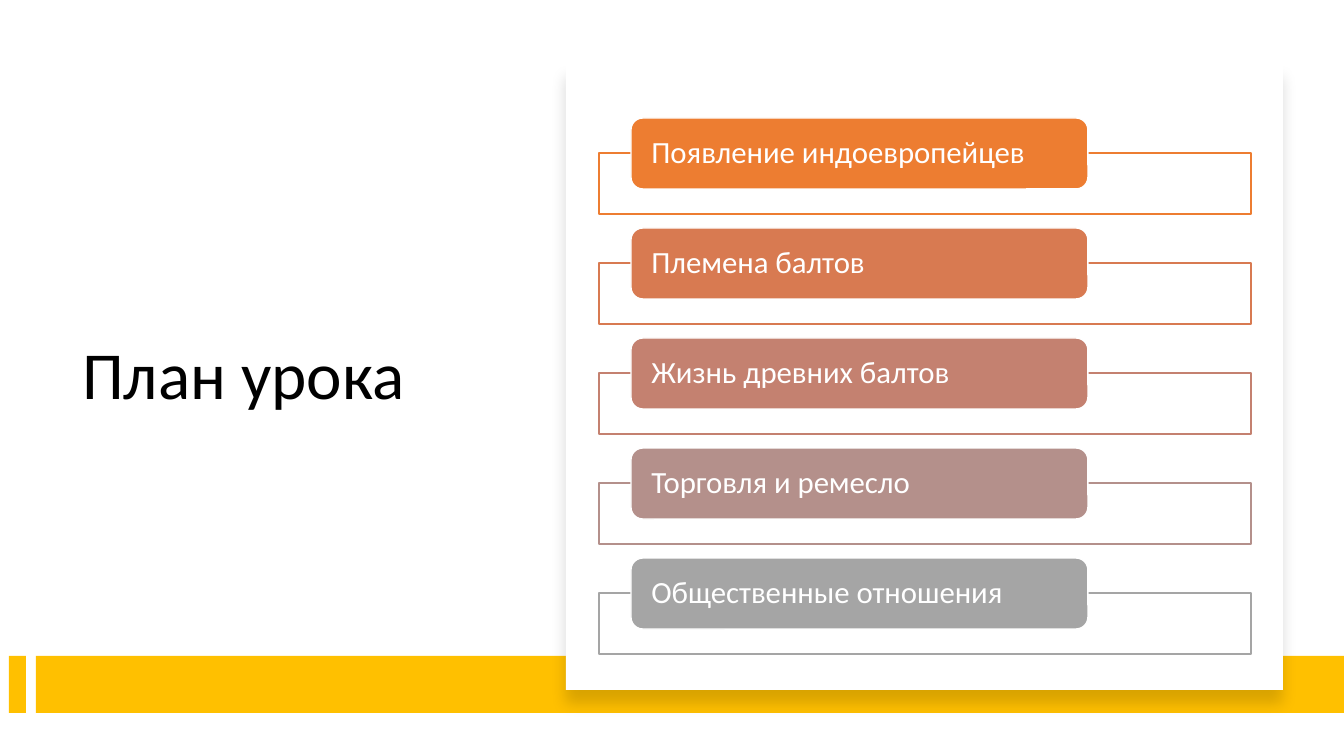
from lxml import etree
from pptx import Presentation
from pptx import util as u
from pptx.dml.color import RGBColor
from pptx.enum import shapes, text
from pptx.oxml.ns import qn

TITLE = "План урока"
TOPICS = [
    ("Появление индоевропейцев", "ED7D31"),
    ("Племена балтов", "D87A51"),
    ("Жизнь древних балтов", "C48170"),
    ("Торговля и ремесло", "B4908B"),
    ("Общественные отношения", "A5A5A5"),
]
GOLD, WHITE, BLACK = "FFC000", "FFFFFF", "000000"
FONT = "Calibri"
BARS = [(9, 656, 17, 57), (36, 656, 1308, 57)]
PANEL = (566, 64, 717, 626)
FRAME = (599, 153, 652, 61)
PILL = (631, 118, 457, 71)
STEP = 110
RECT = shapes.MSO_SHAPE.RECTANGLE
ROUND = shapes.MSO_SHAPE.ROUNDED_RECTANGLE


def px(n):
    return round(n * 914400 / 100.8)


def paint(fmt, color):
    fmt.solid()
    fmt.fore_color.rgb = RGBColor.from_string(color)


def box(slide, kind, area, fill, line=None):
    shape = slide.shapes.add_shape(kind, *map(px, area))
    shape.shadow.inherit = False
    paint(shape.fill, fill)
    if line:
        paint(shape.line.fill, line)
        shape.line.width = u.Pt(1)
    else:
        shape.line.fill.background()
    return shape


def write(shape, words, size, color):
    frame = shape.text_frame
    frame.text = words
    frame.word_wrap = True
    frame.auto_size = text.MSO_AUTO_SIZE.NONE
    frame.vertical_anchor = text.MSO_ANCHOR.MIDDLE
    par = frame.paragraphs[0]
    par.alignment = text.PP_ALIGN.LEFT
    par.line_spacing = 0.9
    font = par.runs[0].font
    font.name, font.size = FONT, u.Pt(size)
    paint(font.fill, color)
    return frame


def shade(shape):
    effects = shape._element.spPr.find(qn("a:effectLst"))
    glow = etree.SubElement(effects, qn("a:outerShdw"), blurRad=str(u.Pt(11)),
                            dist=str(u.Pt(10)), dir="5400000", algn="t", rotWithShape="0")
    tint = etree.SubElement(glow, qn("a:srgbClr"), val=BLACK)
    etree.SubElement(tint, qn("a:alpha"), val="15000")


def main():
    deck = Presentation()
    deck.slide_width, deck.slide_height = px(1344), px(756)
    slide = deck.slides.add_slide(deck.slide_layouts[5])

    title = slide.shapes.title
    title.left, title.top, title.width, title.height = map(px, (72, 121, 418, 514))
    write(title, TITLE, 48, BLACK)

    for area in BARS:
        box(slide, RECT, area, GOLD)
    shade(box(slide, RECT, PANEL, WHITE))

    for i, (topic, color) in enumerate(TOPICS):
        x, y, w, h = FRAME
        frame = box(slide, RECT, (x, y + i * STEP, w, h), WHITE, color)
        tint = frame._element.spPr.find(qn("a:solidFill"))[0]
        etree.SubElement(tint, qn("a:alpha"), val="90000")

        x, y, w, h = PILL
        pill = box(slide, ROUND, (x, y + i * STEP, w, h), color, WHITE)
        label = write(pill, topic, 22, WHITE)
        label.margin_left = label.margin_right = px(17)
        label.margin_top = label.margin_bottom = 0

    deck.save("out.pptx")


if __name__ == "__main__":
    main()
